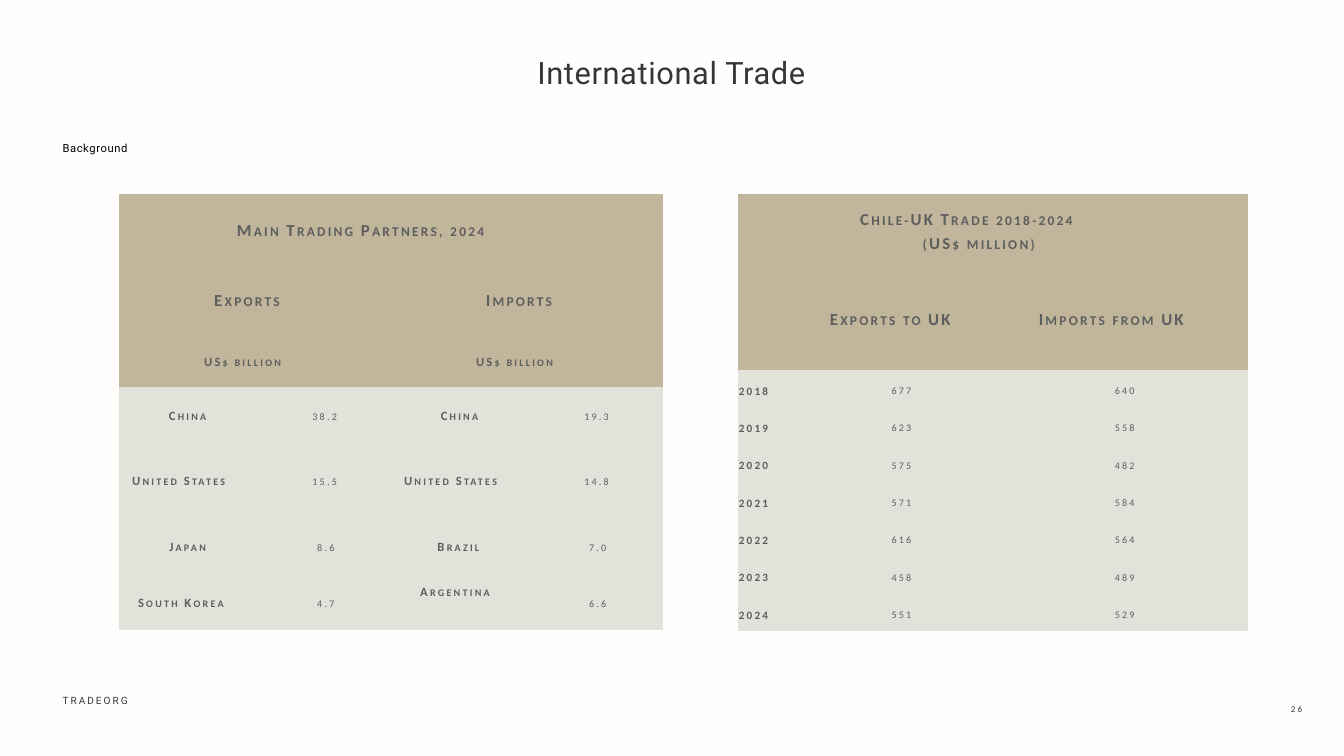
"""Build the International Trade slide with its two tables."""
import dataclasses
import pptx
import pptx.dml.color
import pptx.enum.text
import pptx.oxml.ns
import pptx.util

Pt = pptx.util.Pt
Align = pptx.enum.text.PP_ALIGN
Anchor = pptx.enum.text.MSO_ANCHOR


@dataclasses.dataclass(frozen=True)
class Theme:
    paper: str = "FFFEFC"
    ink: str = "373535"
    black: str = "000000"
    grey: str = "5E5E5E"
    tan: str = "C1B69C"
    stone: str = "E2E2DB"
    sans: str = "Roboto"
    grid: str = "Calibri"
    title: int = 44
    head: int = 24
    year: int = 20
    base: int = 18
    note: int = 16
    plain: str = "{2D5ABB26-0587-4C30-8999-92F81FD0307C}"


class Deck:
    def __init__(self, theme, wide, high):
        self.theme = theme
        self.file = pptx.Presentation()
        self.file.slide_width, self.file.slide_height = Pt(wide), Pt(high)
        self.slide = self.file.slides.add_slide(self.file.slide_layouts[1])
        self.paint(self.slide.background.fill, theme.paper)

    def paint(self, fill, tint):
        fill.solid()
        fill.fore_color.rgb = pptx.dml.color.RGBColor.from_string(tint)

    def letter(self, frame, text, size, face, tint, gap, align=Align.LEFT,
               bold=False, small=False):
        frame.text = text
        for para in frame.paragraphs:
            form = {"alignment": align, "line_spacing": 1.2,
                    "space_before": Pt(0), "space_after": Pt(0)}
            for key, value in form.items():
                setattr(para, key, value)
            for run in para.runs:
                form = {"size": Pt(size), "name": face, "bold": bold}
                for key, value in form.items():
                    setattr(run.font, key, value)
                self.paint(run.font.fill, tint)
                props = run._r.get_or_add_rPr()
                props.set("spc", str(round(gap * 100)))
                props.set("cap", "small" if small else "none")

    def place(self, shape, box, text, anchor=Anchor.TOP, **style):
        for key, value in zip(("left", "top", "width", "height"), box):
            setattr(shape, key, Pt(value))
        frame = shape.text_frame
        form = {"word_wrap": True, "vertical_anchor": anchor,
                "auto_size": pptx.enum.text.MSO_AUTO_SIZE.NONE,
                "margin_left": 0, "margin_right": 0,
                "margin_top": 0, "margin_bottom": 0}
        for key, value in form.items():
            setattr(frame, key, value)
        self.letter(frame, text, **style)

    def title(self, box, text, **style):
        self.place(self.slide.shapes.title, box, text, **style)

    def body(self, box, text, **style):
        shape = self.slide.placeholders[1]
        self.place(shape, box, text, **style)
        for para in shape.text_frame.paragraphs:
            props = para._p.get_or_add_pPr()
            for key in ("marL", "indent"):
                props.set(key, "0")
            props.append(pptx.oxml.parse_xml(
                f'<a:buNone {pptx.oxml.ns.nsdecls("a")}/>'))

    def text(self, box, text, **style):
        self.place(self.slide.shapes.add_textbox(0, 0, 0, 0), box, text, **style)

    def table(self, left, top, cols, rows, heads, data, size, labels, align):
        """Add a table; a row with fewer cells than columns spans them evenly."""
        theme = self.theme
        grid = self.slide.shapes.add_table(
            len(rows), len(cols), Pt(left), Pt(top),
            Pt(sum(cols)), Pt(sum(rows))).table
        grid._tbl.tblPr.find(pptx.oxml.ns.qn("a:tableStyleId")).text = theme.plain
        for col, width in zip(grid.columns, cols):
            col.width = Pt(width)
        for r, (high, words) in enumerate(zip(rows, data)):
            grid.rows[r].height = Pt(high)
            top_row = r < len(heads)
            for cell in grid.rows[r].cells:
                self.paint(cell.fill, theme.tan if top_row else theme.stone)
            span = len(cols) // len(words)
            for n, word in enumerate(words):
                c = n * span
                cell = grid.cell(r, c)
                if span > 1:
                    cell.merge(grid.cell(r, c + span - 1))
                form = {"vertical_anchor": Anchor.MIDDLE,
                        "margin_left": Pt(0.7), "margin_right": Pt(0.7),
                        "margin_top": Pt(0.7),
                        "margin_bottom": Pt(31 if word == "Argentina" else 0)}
                for key, value in form.items():
                    setattr(cell, key, value)
                label = not top_row and c in labels
                self.letter(
                    cell.text_frame, word,
                    size=heads[r] if top_row else size if label else theme.base,
                    face=theme.grid, tint=theme.grey, gap=3.2,
                    align=align if label else Align.CENTER,
                    bold=top_row or label, small=True)


theme = Theme()
deck = Deck(theme, 1920, 1080)

deck.text((89.3, 987.8, 331, 20), "tradeorg", anchor=Anchor.MIDDLE,
          size=theme.base, face=theme.sans, tint=theme.ink, gap=2.9, small=True)
deck.text((1844, 998, 71, 21), "26",
          size=theme.note, face=theme.grid, tint=theme.ink, gap=3.2, small=True)
deck.title((578, 65.5, 763, 124.5), "International Trade", size=theme.title,
           face=theme.sans, tint=theme.ink, gap=0.9, align=Align.CENTER)
deck.body((89.3, 198.7, 331, 22.3), "Background", anchor=Anchor.MIDDLE,
          size=theme.note, face=theme.sans, tint=theme.black, gap=0.9)

trade = [
    ("2018", "677", "640"),
    ("2019", "623", "558"),
    ("2020", "575", "482"),
    ("2021", "571", "584"),
    ("2022", "616", "564"),
    ("2023", "458", "489"),
    ("2024", "551", "529"),
]
deck.table(1054.8, 277.2, [90.8, 294, 343.8], [100.8, 150.5] + [53.3] * 7,
           [theme.head] * 2,
           [("Chile-UK Trade 2018-2024\n(US$ million)",),
            ("", "Exports to UK", "Imports from UK")] + trade,
           theme.year, (0,), Align.LEFT)

mates = [
    ("China", "38.2", "China", "19.3"),
    ("United States", "15.5", "United States", "14.8"),
    ("Japan", "8.6", "Brazil", "7.0"),
    ("South Korea", "4.7", "Argentina", "6.6"),
]
deck.table(169.9, 277.2, [212.2, 176.3] * 2,
           [99.5, 99.5, 77, 77, 110.4, 77, 83], [theme.head] * 2 + [theme.base],
           [("Main Trading Partners, 2024",), ("Exports", "Imports"),
            ("US$ billion",) * 2] + mates,
           theme.base, (0, 2), Align.CENTER)

deck.file.save("out.pptx")
